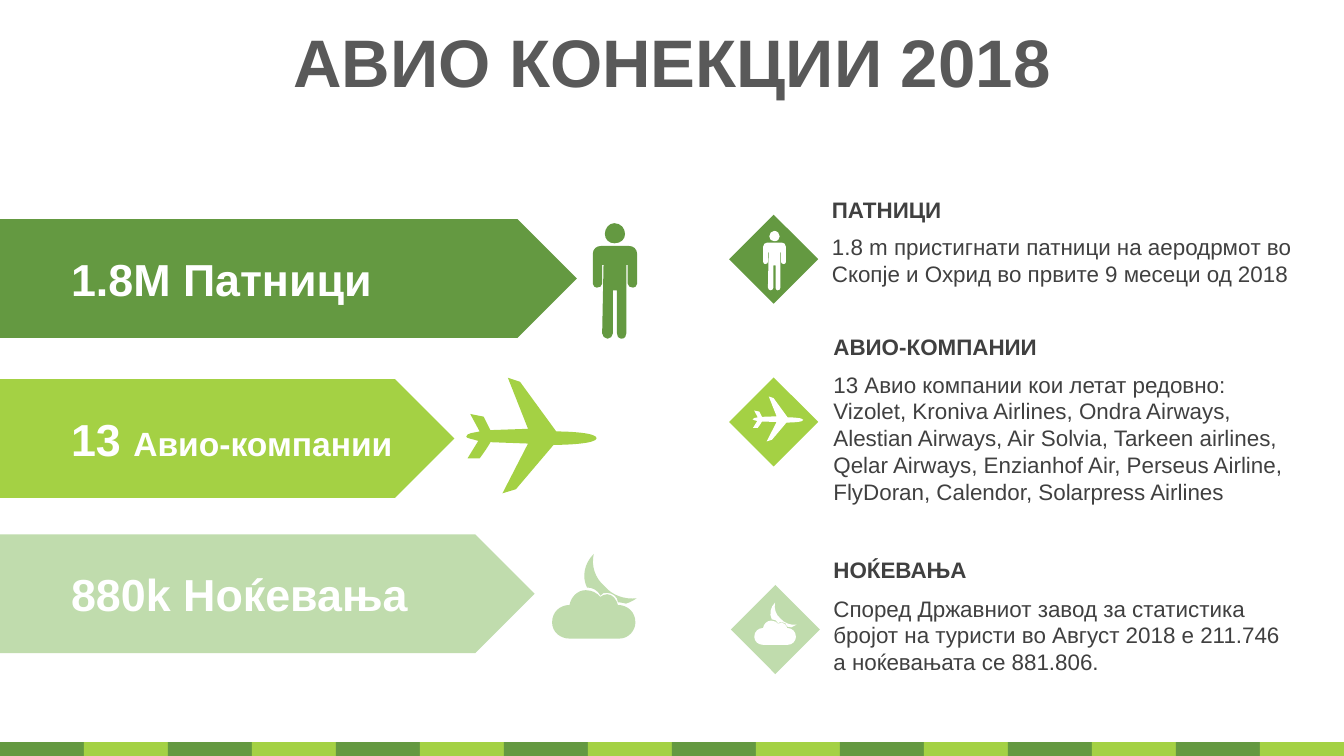
from dataclasses import dataclass

from lxml.etree import SubElement
from pptx import Presentation
from pptx.dml.color import RGBColor
from pptx.enum.shapes import MSO_SHAPE
from pptx.enum.text import MSO_ANCHOR, PP_ALIGN
from pptx.oxml.ns import qn
from pptx.util import Pt


@dataclass(frozen=True)
class Theme:
    font: str = "Arial"
    dark_green: str = "649941"
    lime: str = "A4D144"
    pale_green: str = "C0DCAD"
    white: str = "FFFFFF"
    title_gray: str = "595959"
    text_gray: str = "404040"
    title_size: float = 36
    figure_size: float = 24
    label_size: float = 18
    body_size: float = 12


@dataclass(frozen=True)
class Box:
    left: float
    top: float
    width: float
    height: float

    def lengths(self) -> tuple:
        return Pt(self.left), Pt(self.top), Pt(self.width), Pt(self.height)


@dataclass(frozen=True)
class Run:
    text: str
    size: float
    color: str
    bold: bool = False


@dataclass(frozen=True)
class Icon:
    outline: str
    left: float
    top: float
    scale: float = 0.72


@dataclass(frozen=True)
class Topic:
    color: str
    band: Box
    label_box: Box
    label: list[Run]
    large_icon: Icon
    diamond: Box
    small_icon: Icon
    heading: str
    heading_box: Box
    details: list[str]
    details_box: Box


THEME = Theme()

PERSON = (
    "M 6 17 L 27 17 C 30 17 33 19 33 23 L 33 45 C 33 47 31 48 30 48 C 28 48 26 47 26 45 "
    "L 26 31 L 25 31 L 25 82 C 25 84 24 86 21 86 C 19 86 18 84 18 82 L 18 50 L 15 50 "
    "L 15 82 C 15 84 13 86 11 86 C 9 86 7 84 7 82 L 8 31 L 7 31 L 7 45 C 7 47 5 48 3 48 "
    "C 2 48 0 47 0 45 L 0 23 C 0 19 3 17 6 17 "
    "M 16 0 C 21 0 24 4 24 8 C 24 12 21 15 16 15 C 12 15 9 12 9 8 C 9 4 12 0 16 0"
)
PLANE = (
    "M 1 60 L 9 47 C 6 46 0 45 0 44 C 0 41 6 41 10 40 L 3 27 L 13 29 L 18 39 L 46 38 "
    "L 31 0 L 40 3 L 67 40 C 77 40 97 41 97 45 C 97 49 76 50 65 50 L 37 83 L 27 86 "
    "L 46 49 L 18 48 C 16 52 10 60 10 60"
)
NIGHT_CLOUD = (
    "M 25 27 C 30 27 33 29 36 32 C 37 31 39 30 41 30 C 45 30 48 34 49 38 "
    "C 56 38 62 43 62 51 C 62 57 57 63 50 63 L 13 63 C 6 63 0 58 0 51 C 0 43 6 38 13 38 "
    "C 14 32 19 27 25 27 "
    "M 31 0 C 29 9 32 18 39 24 C 45 31 54 34 63 33 C 60 35 58 36 55 37 C 54 37 52 36 50 36 "
    "L 49 36 C 49 32 45 29 41 29 C 39 29 37 29 36 31 C 34 27 30 25 26 25 C 22 17 24 7 31 0"
)


def figure(text: str) -> Run:
    return Run(text, THEME.figure_size, THEME.white, True)


TOPICS = [
    Topic(
        THEME.dark_green, Box(0, 117.4, 309, 63.6), Box(31, 131.4, 227, 36),
        [figure("1.8M Патници")], Icon(PERSON, 317.6, 119.6),
        Box(390.6, 115, 47.7, 47.7), Icon(PERSON, 408.8, 123.7, 0.37),
        "ПАТНИЦИ", Box(438.6, 101.3, 261.4, 21.8),
        ["1.8 m пристигнати патници на аеродрмoт во Скопје и Охрид во првите 9 месеци од 2018"],
        Box(438.6, 113.8, 261.4, 51),
    ),
    Topic(
        THEME.lime, Box(0, 203.1, 243.4, 63.6), Box(31, 217.1, 193, 36),
        [figure("13 "), Run("Авио-компании", THEME.label_size, THEME.white, True)],
        Icon(PLANE, 249.8, 202.4),
        Box(390.6, 202.2, 47.7, 47.7), Icon(PLANE, 403.2, 212.4, 0.28),
        "АВИО-КОМПАНИИ", Box(439.4, 174.7, 261, 21.8),
        ["13 Авио компании кои летат редовно:",
         "Vizolet, Kroniva Airlines, Ondra Airways, Alestian Airways, Air Solvia, "
         "Tarkeen airlines, Qelar Airways, Enzianhof Air, Perseus Airline, "
         "FlyDoran, Calendor, Solarpress Airlines"],
        Box(439.4, 194.6, 261, 80),
    ),
    Topic(
        THEME.pale_green, Box(0, 286.3, 286.4, 63.6), Box(31, 300, 204, 36),
        [figure("880k Ноќевања")], Icon(NIGHT_CLOUD, 295.8, 296.8),
        Box(391.5, 313.4, 47.7, 47.7), Icon(NIGHT_CLOUD, 404.1, 322.8, 0.36),
        "НОЌЕВАЊА", Box(439.4, 294.1, 222, 21.8),
        ["Според Државниот завод за статистика",
         "бројот на туристи во Август 2018 е 211.746 а ноќевањата се 881.806."],
        Box(439.4, 314.7, 255, 51),
    ),
]


def paint(shape, color: str) -> None:
    shape.shadow.inherit = False
    shape.fill.solid()
    shape.fill.fore_color.rgb = RGBColor.from_string(color)
    shape.line.fill.background()


def add_block(slide, kind: MSO_SHAPE, box: Box, color: str) -> None:
    paint(slide.shapes.add_shape(kind, *box.lengths()), color)


def add_run(paragraph, item: Run) -> None:
    run = paragraph.add_run()
    run.text = item.text
    run.font.name = THEME.font
    run.font.size = Pt(item.size)
    run.font.bold = item.bold
    run.font.color.rgb = RGBColor.from_string(item.color)


def add_text(slide, box: Box, paragraphs: list[list[Run]]) -> None:
    frame = slide.shapes.add_textbox(*box.lengths()).text_frame
    frame.word_wrap = True
    frame.vertical_anchor = MSO_ANCHOR.MIDDLE
    for index, runs in enumerate(paragraphs):
        paragraph = frame.add_paragraph() if index else frame.paragraphs[0]
        for item in runs:
            add_run(paragraph, item)


def bend_segments(shape, commands: list[str]) -> None:
    segments = iter(list(shape.element.iter(qn("a:lnTo"))))
    for command in commands:
        segment = next(segments)
        if command == "C":
            curve = SubElement(segment.getparent(), qn("a:cubicBezTo"))
            segment.addprevious(curve)
            for part in (segment, next(segments), next(segments)):
                curve.append(part[0])
                part.getparent().remove(part)


def add_icon(slide, icon: Icon, color: str) -> None:
    contours, commands = [], []
    tokens = iter(icon.outline.split())
    for command in tokens:
        count = 3 if command == "C" else 1
        points = [(int(next(tokens)), int(next(tokens))) for _ in range(count)]
        if command == "M":
            contours.append(points)
        else:
            contours[-1].extend(points)
            commands.append(command)
    first, *others = contours
    builder = slide.shapes.build_freeform(*first[0], scale=Pt(icon.scale))
    builder.add_line_segments(first[1:], close=True)
    for contour in others:
        builder.move_to(*contour[0])
        builder.add_line_segments(contour[1:], close=True)
    shape = builder.convert_to_shape(Pt(icon.left), Pt(icon.top))
    bend_segments(shape, commands)
    paint(shape, color)


def add_title(slide, text: str) -> None:
    title = slide.shapes.title
    title.left, title.top, title.width, title.height = Box(0, 9.7, 720, 45.4).lengths()
    title.text_frame.vertical_anchor = MSO_ANCHOR.MIDDLE
    paragraph = title.text_frame.paragraphs[0]
    paragraph.alignment = PP_ALIGN.CENTER
    add_run(paragraph, Run(text, THEME.title_size, THEME.title_gray, True))


def add_topic(slide, topic: Topic) -> None:
    add_block(slide, MSO_SHAPE.PENTAGON, topic.band, topic.color)
    add_text(slide, topic.label_box, [topic.label])
    add_icon(slide, topic.large_icon, topic.color)
    add_block(slide, MSO_SHAPE.DIAMOND, topic.diamond, topic.color)
    add_icon(slide, topic.small_icon, THEME.white)
    details = [[Run(text, THEME.body_size, THEME.text_gray)] for text in topic.details]
    add_text(slide, topic.details_box, details)
    add_text(slide, topic.heading_box, [[Run(topic.heading, THEME.body_size, THEME.text_gray, True)]])


def main() -> None:
    presentation = Presentation()
    presentation.slide_width, presentation.slide_height = Pt(720), Pt(405)
    slide = presentation.slides.add_slide(presentation.slide_layouts[5])
    for index in range(16):
        color = THEME.lime if index % 2 else THEME.dark_green
        add_block(slide, MSO_SHAPE.RECTANGLE, Box(index * 45, 397.6, 45, 7.6), color)
    add_title(slide, "АВИО КОНЕКЦИИ 2018")
    for topic in TOPICS:
        add_topic(slide, topic)
    presentation.save("out.pptx")


if __name__ == "__main__":
    main()
